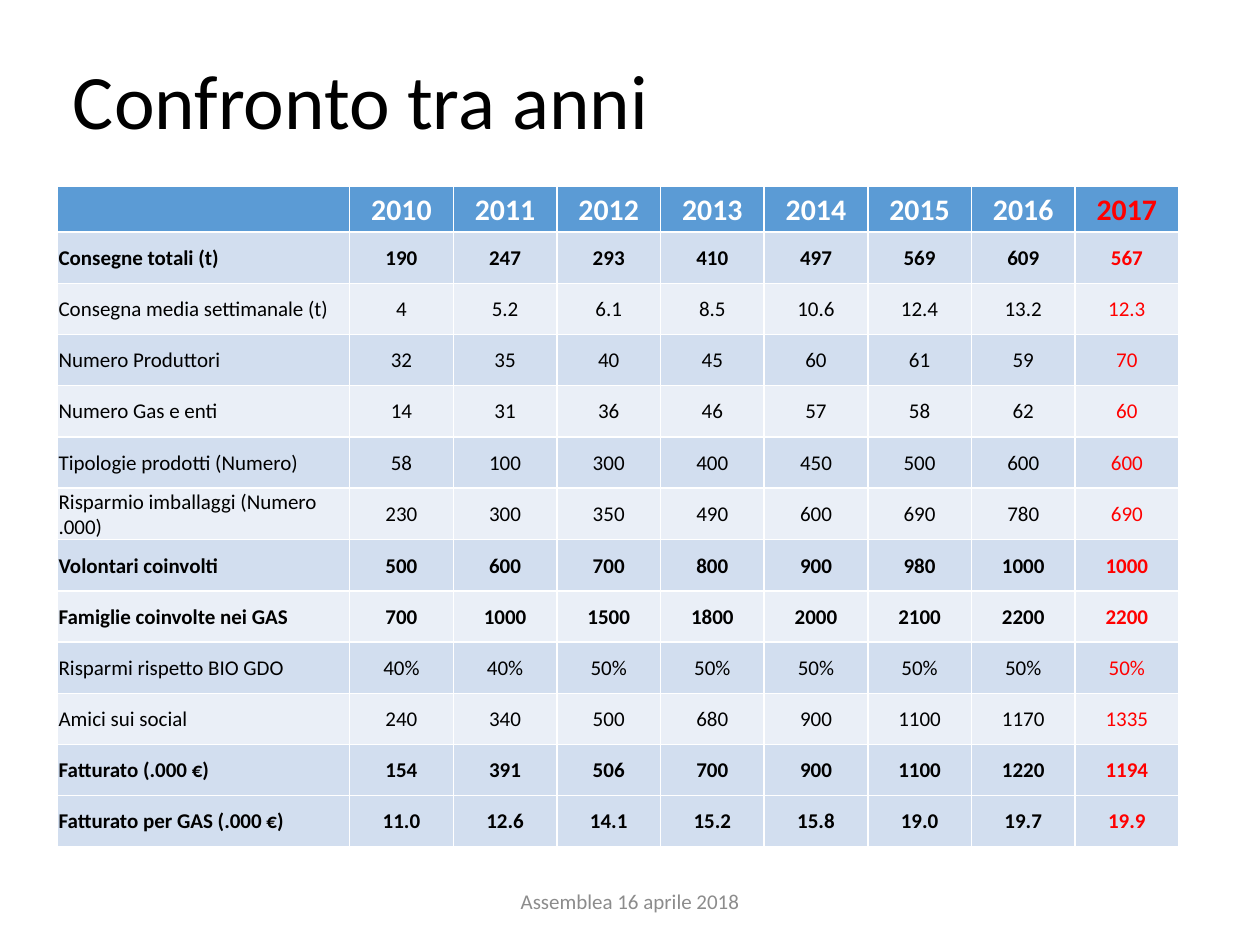
from lxml import etree
from pptx import Presentation
from pptx.dml.color import RGBColor
from pptx.enum.text import MSO_ANCHOR, PP_ALIGN
from pptx.oxml.ns import qn
from pptx.util import Pt

MIDDLE = MSO_ANCHOR.MIDDLE
LEFT, CENTER = PP_ALIGN.LEFT, PP_ALIGN.CENTER
FONT = "Calibri"
WHITE, BLACK, RED, GREY = "FFFFFF", "000000", "FF0000", "8C8C8C"
HEADER_BLUE, BAND_DARK, BAND_LIGHT = "5B9BD5", "D2DEEF", "EAEFF7"

HEADER = ["", "2010", "2011", "2012", "2013", "2014", "2015", "2016", "2017"]
INDICATORS = [
    ("Consegne totali (t)", "190 247 293 410 497 569 609 567"),
    ("Consegna media settimanale (t)", "4 5.2 6.1 8.5 10.6 12.4 13.2 12.3"),
    ("Numero Produttori", "32 35 40 45 60 61 59 70"),
    ("Numero Gas e enti", "14 31 36 46 57 58 62 60"),
    ("Tipologie prodotti (Numero)", "58 100 300 400 450 500 600 600"),
    ("Risparmio imballaggi (Numero .000)", "230 300 350 490 600 690 780 690"),
    ("Volontari coinvolti", "500 600 700 800 900 980 1000 1000"),
    ("Famiglie coinvolte nei GAS", "700 1000 1500 1800 2000 2100 2200 2200"),
    ("Risparmi rispetto BIO GDO", "40% 40% 50% 50% 50% 50% 50% 50%"),
    ("Amici sui social", "240 340 500 680 900 1100 1170 1335"),
    ("Fatturato (.000 €)", "154 391 506 700 900 1100 1220 1194"),
    ("Fatturato per GAS (.000 €)", "11.0 12.6 14.1 15.2 15.8 19.0 19.7 19.9"),
]
BOLD_ROWS = {0, 1, 7, 8, 11, 12}


def rgb(value):
    """Turn a hex string into a colour."""
    return RGBColor.from_string(value)


def style(paragraph, size, color, align=LEFT, bold=False):
    """Set the font and alignment of a paragraph."""
    paragraph.alignment = align
    font = paragraph.font
    font.name, font.size, font.bold = FONT, Pt(size), bold
    font.color.rgb = rgb(color)


def add_line(slide, box, text, size, color, align, spacing):
    """Place one vertically centred line of text in a box."""
    frame = slide.shapes.add_textbox(*map(Pt, box)).text_frame
    frame.word_wrap = True
    frame.vertical_anchor = MIDDLE
    paragraph = frame.paragraphs[0]
    paragraph.text = text
    paragraph.line_spacing = spacing
    style(paragraph, size, color, align)


def add_border(cell, side, width):
    """Draw one white edge of a cell."""
    edge = etree.SubElement(cell._tc.get_or_add_tcPr(), qn(f"a:ln{side}"), w=str(Pt(width)))
    fill = etree.SubElement(edge, qn("a:solidFill"))
    etree.SubElement(fill, qn("a:srgbClr"), val=WHITE)


def fill_cell(cell, text, row, column):
    """Write and format a cell according to its row and column."""
    for side in "LRTB":
        meets_header = (row, side) in ((0, "B"), (1, "T"))
        add_border(cell, side, 1.5 if meets_header else 1)
    is_last_row = row == len(INDICATORS)
    band = BAND_DARK if row % 2 or is_last_row else BAND_LIGHT
    cell.fill.solid()
    cell.fill.fore_color.rgb = rgb(band if row else HEADER_BLUE)
    cell.vertical_anchor = MIDDLE
    cell.margin_left = cell.margin_right = cell.margin_top = Pt(0.7)
    cell.margin_bottom = 0
    cell.text = text
    is_latest_year = column == len(HEADER) - 1
    color = RED if is_latest_year else BLACK if row else WHITE
    style(cell.text_frame.paragraphs[0], 12 if row else 17, color,
          CENTER if column else LEFT, row in BOLD_ROWS)


def add_comparison(slide, box, label_width=167, header_height=26):
    """Build the table of indicators by year in a box."""
    width, height = box[2:]
    rows = [HEADER] + [[label, *values.split()] for label, values in INDICATORS]
    table = slide.shapes.add_table(len(rows), len(HEADER), *map(Pt, box)).table
    table.horz_banding = False
    for index, column in enumerate(table.columns):
        column.width = Pt((width - label_width) / (len(HEADER) - 1) if index else label_width)
    for index, row in enumerate(table.rows):
        row.height = Pt((height - header_height) / len(INDICATORS) if index else header_height)
    for r, texts in enumerate(rows):
        for c, text in enumerate(texts):
            fill_cell(table.cell(r, c), text, r, c)


def main():
    """Build and save the slide."""
    deck = Presentation()
    deck.slide_width, deck.slide_height = Pt(720), Pt(540)
    slide = deck.slides.add_slide(deck.slide_layouts[6])
    add_line(slide, (34.6, 20.2, 651.6, 78.5), "Confronto tra anni", 44, BLACK, LEFT, 0.9)
    add_line(slide, (238.3, 500.4, 243.4, 28.8), "Assemblea 16 aprile 2018", 12, GREY, CENTER, 1.0)
    add_comparison(slide, (32.8, 106.6, 640.8, 377.3))
    deck.save("out.pptx")


if __name__ == "__main__":
    main()
